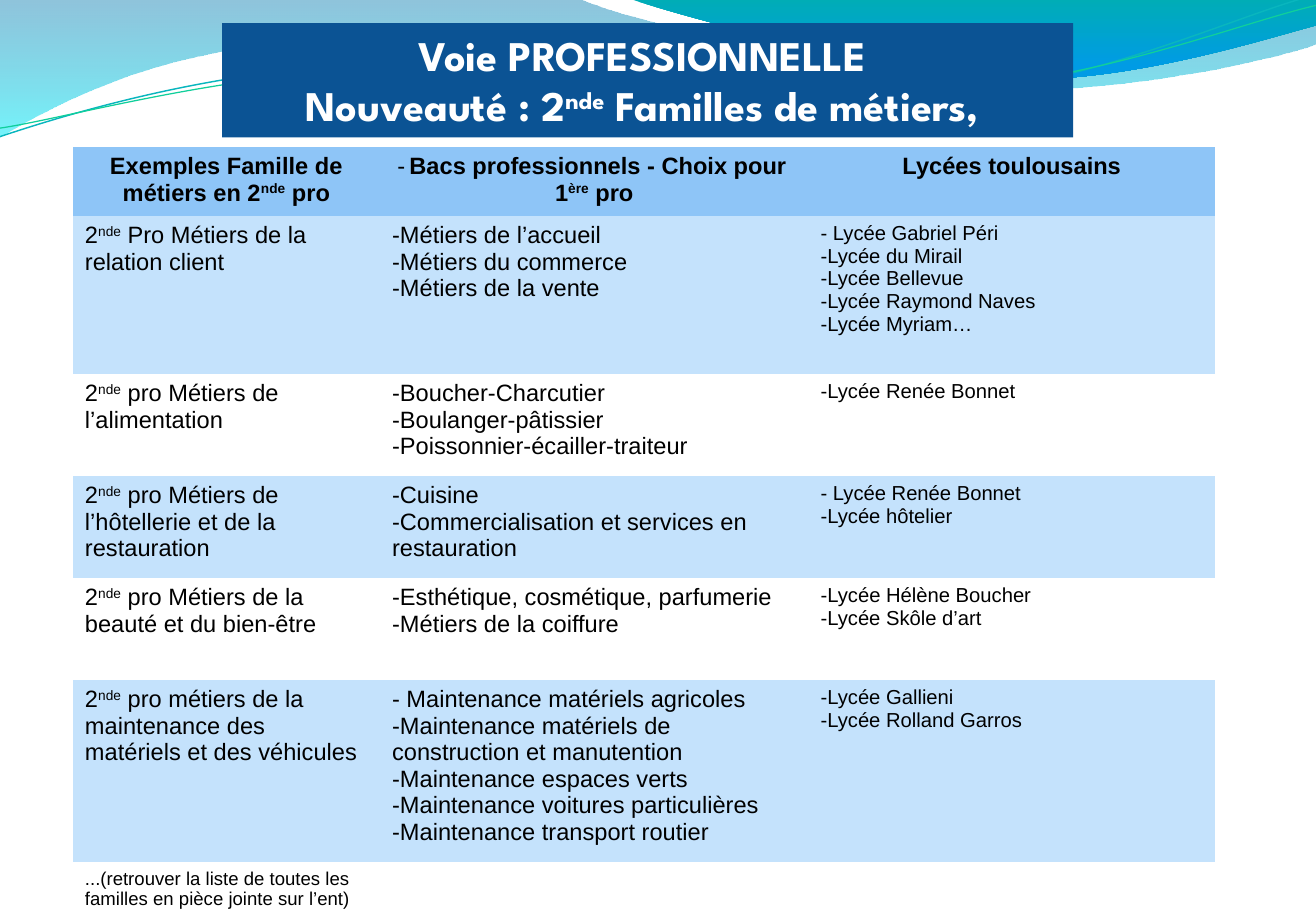
import math
from dataclasses import dataclass

from lxml import etree
from pptx import Presentation
from pptx.dml.color import RGBColor
from pptx.enum.text import MSO_ANCHOR, MSO_AUTO_SIZE, PP_ALIGN
from pptx.oxml.ns import qn
from pptx.util import Pt

PX = 9144
SLIDE_SIZE = (1084, 750)
CENTER, LEFT = PP_ALIGN.CENTER, PP_ALIGN.LEFT
TOP = MSO_ANCHOR.TOP
GROW = MSO_AUTO_SIZE.SHAPE_TO_FIT_TEXT
TITLE_ONLY = 5
PLAIN_TABLE = "{2D5ABB26-0587-4C30-8999-92F81FD0307C}"


@dataclass(frozen=True)
class Theme:
    """Colours, fonts and type sizes of the slide."""
    banner: str = "0B5394"
    banner_text: str = "FFFFFF"
    text: str = "000000"
    header: str = "8EC5F7"
    band: str = "C4E2FC"
    title_font: str = "League Spartan"
    body_font: str = "Arial"
    title_size: int = 25
    body_size: int = 14
    school_size: int = 12
    note_size: int = 11


THEME = Theme()

TITLE = ["Voie PROFESSIONNELLE ", "Nouveauté : 2^nde^ Familles de métiers, "]
COLUMNS = [253, 353, 335]
HEADINGS = ["Exemples Famille de métiers en 2^nde^ pro",
            "•Bacs professionnels - Choix pour 1^ère^ pro",
            "Lycées toulousains"]
FAMILIES = [
    (130, "2^nde^ Pro Métiers de la relation client",
     ["•Métiers de l’accueil", "•Métiers du commerce", "•Métiers de la vente"],
     ["• Lycée Gabriel Péri", "•Lycée du Mirail", "•Lycée Bellevue",
      "•Lycée Raymond Naves", "•Lycée Myriam…"]),
    (84, "2^nde^ pro Métiers de l’alimentation",
     ["•Boucher-Charcutier", "•Boulanger-pâtissier",
      "•Poissonnier-écailler-traiteur"],
     ["•Lycée Renée Bonnet"]),
    (84, "2^nde^ pro Métiers de l’hôtellerie et de la restauration",
     ["•Cuisine", "•Commercialisation et services en restauration"],
     ["• Lycée Renée Bonnet", "•Lycée hôtelier"]),
    (84, "2^nde^ pro Métiers de la beauté et du bien-être",
     ["•Esthétique, cosmétique, parfumerie", "•Métiers de la coiffure"],
     ["-Lycée Hélène Boucher", "•Lycée Skôle d’art"]),
    (150, "2^nde^ pro métiers de la maintenance des matériels et des véhicules",
     ["• Maintenance matériels agricoles",
      "•Maintenance matériels de construction et manutention",
      "•Maintenance espaces verts", "•Maintenance voitures particulières",
      "•Maintenance transport routier"],
     ["•Lycée Gallieni", "•Lycée Rolland Garros"]),
]
NOTE = "...(retrouver la liste de toutes les familles en pièce jointe sur l’ent)"
HEADER_HEIGHT, NOTE_HEIGHT = 57, 84

BANDS = [
    ([(0, -1)],
     [[(477, -1)],
      [(515, 17), (719, 63), (822, 63)],
      [(924, 63), (1038, 26), (1084, 9)],
      [(1085, 36)],
      [(1066, 44), (942, 76), (808, 75)],
      [(674, 75), (414, 28), (279, 34)],
      [(140, 35), (50, 83), (-1, 113)]],
     [(0, "0079AF", 44), (1, "00EBF8", 55)]),
    ([(519, -1)],
     [[(552, 11), (739, 62), (833, 65)],
      [(927, 69), (1042, 32), (1084, 21)],
      [(1084, 0)]],
     [(0, "00ADB6", 100), (0.8, "009BE5", 100)]),
]
STRANDS = [
    ([(0, 113)],
     [[(52, 95), (171, 58), (300, 53)],
      [(428, 47), (642, 88), (772, 79)],
      [(902, 69), (1017, 14), (1081, -4)]], (541, 57), "09B6BE", 0.85),
    ([(0, 106)],
     [[(51, 98), (177, 62), (307, 57)],
      [(436, 52), (647, 83), (777, 74)],
      [(906, 66), (1020, 19), (1084, 4)]], (541, 59), "10CF9B", 0.75),
]
STRAND_TILT = 357.3


def rgb(code):
    """Turn a hex code into a colour."""
    return RGBColor.from_string(code)


def level(points, center):
    """Turn points back by the strand tilt around a center."""
    angle = math.radians(360 - STRAND_TILT)
    cos, sin = math.cos(angle), math.sin(angle)
    cx, cy = center
    return [(round(cx + (x - cx) * cos - (y - cy) * sin),
             round(cy + (x - cx) * sin + (y - cy) * cos)) for x, y in points]


def add_outline(slide, box, start, segments, closed):
    """Draw a freeform whose three-point segments are cubic curves."""
    builder = slide.shapes.build_freeform(*start[0], scale=PX)
    builder.add_line_segments([point for segment in segments for point in segment],
                              close=closed)
    outline = builder.convert_to_shape(box[0] * PX, box[1] * PX)
    outline.shadow.inherit = False
    lines = iter(list(outline._element.iter(qn("a:lnTo"))))
    for segment in segments:
        parts = [next(lines) for _ in segment]
        if len(parts) == 3:
            curve = etree.Element(qn("a:cubicBezTo"))
            parts[0].addprevious(curve)
            for part in parts:
                curve.append(part[0])
                part.getparent().remove(part)
    return outline


def add_waves(slide, box):
    """Draw the gradient bands and thin strands across the top."""
    for start, segments, stops in BANDS:
        band = add_outline(slide, box, start, segments, True)
        band.line.fill.background()
        band.fill.gradient()
        band.fill.gradient_angle = 270
        for stop, (position, color, _) in zip(band.fill.gradient_stops, stops):
            stop.position = position
            stop.color.rgb = rgb(color)
        for shade, (_, _, opacity) in zip(band._element.iter(qn("a:srgbClr")), stops):
            if opacity < 100:
                etree.SubElement(shade, qn("a:alpha"), val=str(opacity * 1000))
    for start, segments, center, color, weight in STRANDS:
        strand = add_outline(slide, box, level(start, center),
                             [level(segment, center) for segment in segments], False)
        strand.rotation = STRAND_TILT
        strand.fill.background()
        strand.line.color.rgb = rgb(color)
        strand.line.width = Pt(weight)


def add_dash(paragraph, outdent):
    """Give a paragraph a dash as its bullet."""
    properties = paragraph._p.get_or_add_pPr()
    properties.set("marL", "0")
    properties.set("indent", str(-outdent * PX))
    bullet_color = etree.SubElement(properties, qn("a:buClr"))
    etree.SubElement(bullet_color, qn("a:srgbClr"), val=THEME.text)
    etree.SubElement(properties, qn("a:buFont"), typeface=THEME.body_font)
    etree.SubElement(properties, qn("a:buChar"), char="-")


def write(frame, lines, font, size, color, bold=False, align=LEFT):
    """Write lines where • asks for a dash bullet and ^ encloses superscript."""
    for index, line in enumerate(lines):
        paragraph = frame.add_paragraph() if index else frame.paragraphs[0]
        paragraph.alignment = align
        if line.startswith("•"):
            add_dash(paragraph, 10 if size == THEME.body_size else 8)
        for part, words in enumerate(line.removeprefix("•").split("^")):
            run = paragraph.add_run()
            run.text = words
            run.font.name = font
            run.font.size = Pt(size)
            run.font.bold = bold
            run.font.color.rgb = rgb(color)
            if part % 2:
                run._r.get_or_add_rPr().set("baseline", "30000")


def add_banner(slide, box):
    """Place the title on its blue banner, in front of the waves."""
    banner = slide.shapes.title
    slide.shapes._spTree.append(banner._element)
    banner.left, banner.top, banner.width, banner.height = (v * PX for v in box)
    banner.fill.solid()
    banner.fill.fore_color.rgb = rgb(THEME.banner)
    frame = banner.text_frame
    frame.auto_size = GROW
    frame.word_wrap = True
    frame.vertical_anchor = TOP
    write(frame, TITLE, THEME.title_font, THEME.title_size, THEME.banner_text,
          True, CENTER)


def fill_cell(cell, lines, size, fill, bold=False, align=LEFT):
    """Write one table cell and set its background."""
    cell.margin_left = cell.margin_right = 10 * PX
    cell.margin_top = cell.margin_bottom = 5 * PX
    if fill:
        cell.fill.solid()
        cell.fill.fore_color.rgb = rgb(fill)
    else:
        cell.fill.background()
    write(cell.text_frame, lines, THEME.body_font, size, THEME.text, bold, align)


def add_families(slide, box):
    """Build the table of families, diplomas and schools."""
    heights = [HEADER_HEIGHT, *(family[0] for family in FAMILIES), NOTE_HEIGHT]
    table = slide.shapes.add_table(len(heights), len(COLUMNS),
                                   *(v * PX for v in box), sum(heights) * PX).table
    table.first_row = table.horz_banding = False
    table._tbl.tblPr.find(qn("a:tableStyleId")).text = PLAIN_TABLE
    for column, width in zip(table.columns, COLUMNS):
        column.width = width * PX
    for row, height in zip(table.rows, heights):
        row.height = height * PX
    for column, heading in enumerate(HEADINGS):
        fill_cell(table.cell(0, column), [heading], THEME.body_size,
                  THEME.header, True, CENTER)
    sizes = [THEME.body_size, THEME.body_size, THEME.school_size]
    for row, (_, family, diplomas, schools) in enumerate(FAMILIES, 1):
        fill = THEME.band if row % 2 else None
        for column, lines in enumerate([[family], diplomas, schools]):
            fill_cell(table.cell(row, column), lines, sizes[column], fill)
    for column, lines in enumerate([[NOTE], [], []]):
        fill_cell(table.cell(len(heights) - 1, column), lines, THEME.note_size, None)


def main():
    """Build and save the slide."""
    deck = Presentation()
    deck.slide_width, deck.slide_height = (v * PX for v in SLIDE_SIZE)
    slide = deck.slides.add_slide(deck.slide_layouts[TITLE_ONLY])
    add_waves(slide, (0, 0))
    add_banner(slide, (183, 19, 701, 94))
    add_families(slide, (60, 121, sum(COLUMNS)))
    deck.save("out.pptx")


if __name__ == "__main__":
    main()
